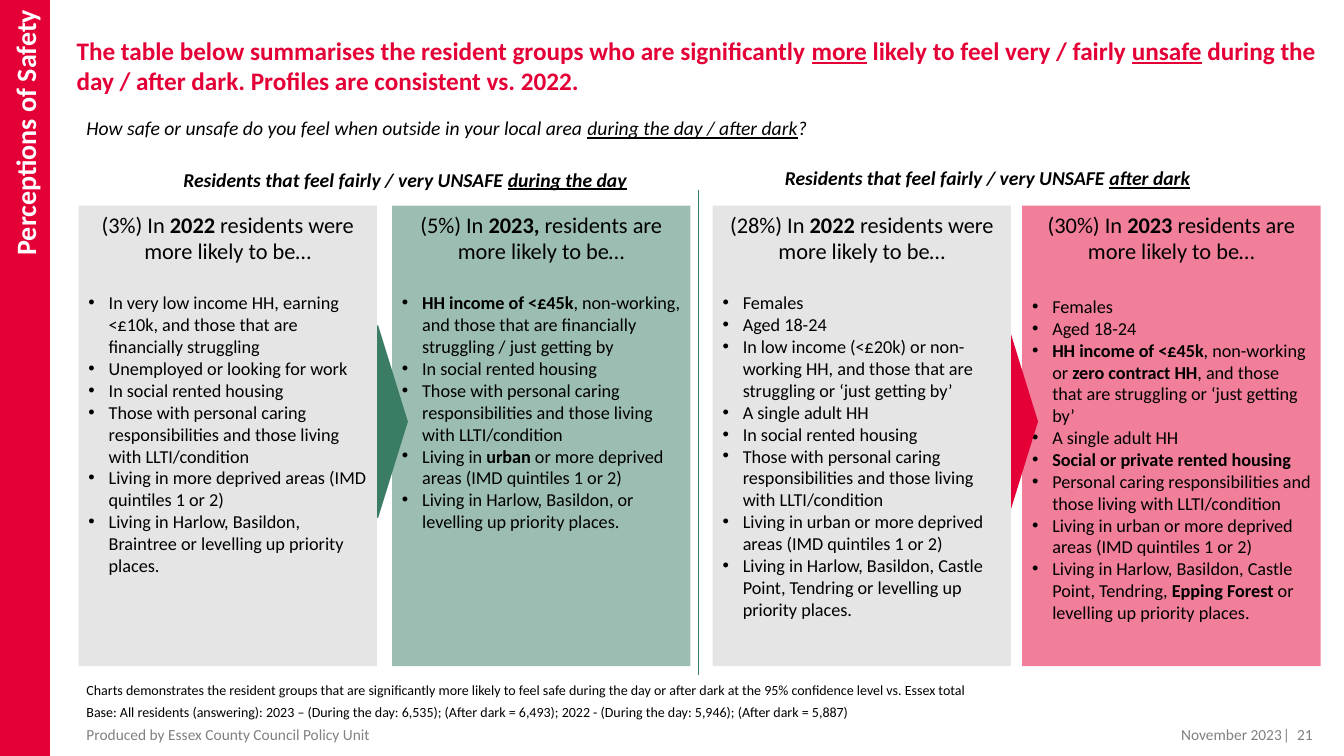
"""Build the slide on resident groups who feel unsafe."""
from lxml import etree
from pptx import Presentation
from pptx import util as u
from pptx.dml.color import RGBColor
from pptx.enum import shapes, text
from pptx.oxml.ns import qn

RED, GREEN, GREY, BLACK, WHITE, FOOTER = "E40037", "3A7D64", "E5E5E5", "000000", "FFFFFF", "808080"
LEFT, RIGHT, CENTER = text.PP_ALIGN.LEFT, text.PP_ALIGN.RIGHT, text.PP_ALIGN.CENTER
TOP, MIDDLE = text.MSO_ANCHOR.TOP, text.MSO_ANCHOR.MIDDLE
INSETS = (0.25, 0.13, 0.25, 0.13)
PANEL_TOP, PANEL_WIDTH, PANEL_HEIGHT = 5.18, 7.52, 11.61
ARROW_TOP, ARROW_WIDTH, ARROW_HEIGHT = 8.2, 1.5, 4.85
ARROW_OVERLAP = 0.97
INDENT = 0.51

TITLE = ("The table below summarises the resident groups who are significantly *more* likely to feel "
         "very / fairly *unsafe* during the day / after dark. Profiles are consistent vs. 2022.")
SECTION = "Perceptions of Safety"
CARERS = "Those with personal caring responsibilities and those living with LLTI/condition"
URBAN = "Living in urban or more deprived areas (IMD quintiles 1 or 2)"

PANELS_2023 = [
    (25.76, RED, 22, "(30%) In *2023* residents are more likely to be…", [
        "Females",
        "Aged 18-24",
        "*HH income of <£45k*, non-working or *zero contract HH*, and those that are "
        "struggling or ‘just getting by’",
        "A single adult HH",
        "*Social or private rented housing*",
        "Personal caring responsibilities and those living with LLTI/condition",
        URBAN,
        "Living in Harlow, Basildon, Castle Point, Tendring, *Epping Forest *or levelling up "
        "priority places."]),
    (9.88, GREEN, 19.5, "(5%) In *2023, *residents are more likely to be…", [
        "*HH income of <£45k*, non-working, and those that are financially struggling / just getting by",
        "In social rented housing",
        CARERS,
        "Living in *urban* or more deprived areas (IMD quintiles 1 or 2)",
        "Living in Harlow, Basildon, or levelling up priority places."]),
]
PANELS_2022 = [
    (1.98, GREY, 19.5, "(3%) In *2022* residents were more likely to be…", [
        "In very low income HH, earning <£10k, and those that are financially struggling",
        "Unemployed or looking for work",
        "In social rented housing",
        CARERS,
        "Living in more deprived areas (IMD quintiles 1 or 2)",
        "Living in Harlow, Basildon, Braintree or levelling up priority places."]),
    (17.96, GREY, 19.5, "(28%) In *2022* residents were more likely to be…", [
        "Females",
        "Aged 18-24",
        "In low income (<£20k) or non-working HH, and those that are struggling or ‘just getting by’",
        "A single adult HH",
        "In social rented housing",
        CARERS,
        URBAN,
        "Living in Harlow, Basildon, Castle Point, Tendring or levelling up priority places."]),
]

QUESTION = {"size": u.Pt(14), "italic": True}
SUBHEAD = {"size": u.Pt(14), "italic": True, "bold": True}
NOTE = {"size": u.Pt(10)}
SMALL = {"size": u.Pt(11)}
LABELS = [
    ((1.93, 2.79, 21.92, 0.86), "How safe or unsafe do you feel when outside in your local area "
     "*during the day / after dark*?", QUESTION, BLACK, LEFT, TOP, INSETS),
    ((4.37, 4.09, 11.91, 0.86), "Residents that feel fairly / very UNSAFE *during the day*",
     SUBHEAD, BLACK, LEFT, TOP, INSETS),
    ((19.53, 4.06, 11.4, 0.86), "Residents that feel fairly / very UNSAFE *after dark*",
     SUBHEAD, BLACK, LEFT, TOP, INSETS),
    ((1.93, 17.04, 25.98, 0.69), "Charts demonstrates the resident groups that are significantly more likely "
     "to feel safe during the day or after dark at the 95% confidence level vs. Essex total",
     NOTE, BLACK, LEFT, TOP, INSETS),
    ((1.93, 17.6, 26.67, 0.69), "Base: All residents (answering): 2023 – (During the day: 6,535); "
     "(After dark = 6,493); 2022 - (During the day: 5,946); (After dark = 5,887)",
     NOTE, BLACK, LEFT, TOP, INSETS),
    ((1.93, 18.31, 16.61, 0.38), "Produced by Essex County Council Policy Unit",
     SMALL, FOOTER, LEFT, MIDDLE, INSETS),
    ((26.21, 18.31, 6.1, 0.38), "November 2023", SMALL, FOOTER, RIGHT, MIDDLE, (0.25, 0.13, 0, 0.13)),
    ((32.08, 18.31, 1.3, 0.38), "|\t21", SMALL, FOOTER, LEFT, MIDDLE, (0.25, 0.13, 0, 0.13)),
]


def color(value):
    return RGBColor.from_string(value)


def lengths(box):
    return [u.Cm(value) for value in box]


def assign(target, values):
    for name, value in values.items():
        setattr(target, name, value)


def write(paragraph, words, font, ink, emphasis="underline"):
    for index, part in enumerate(words.split("*")):
        if part:
            run = paragraph.add_run()
            run.text = part
            assign(run.font, {"name": "Calibri", **font})
            run.font.color.rgb = color(ink)
            if index % 2:
                setattr(run.font, emphasis, True)


def set_frame(shape, anchor=TOP, insets=INSETS):
    frame = shape.text_frame
    left, top, right, bottom = lengths(insets)
    assign(frame, {"word_wrap": True, "auto_size": text.MSO_AUTO_SIZE.NONE, "vertical_anchor": anchor,
                   "margin_left": left, "margin_top": top, "margin_right": right, "margin_bottom": bottom})
    return frame


def add_block(slide, kind, box, fill, alpha=None):
    shape = slide.shapes.add_shape(kind, *lengths(box))
    shape.shadow.inherit = False
    shape.fill.solid()
    shape.fill.fore_color.rgb = color(fill)
    shape.line.fill.background()
    if alpha:
        tint = shape.fill._xPr.find(".//" + qn("a:srgbClr"))
        etree.SubElement(tint, qn("a:alpha"), val=str(alpha * 1000))
    return shape


def add_panel(slide, left, fill, gap, heading, groups, alpha=None):
    box = (left, PANEL_TOP, PANEL_WIDTH, PANEL_HEIGHT)
    frame = set_frame(add_block(slide, shapes.MSO_SHAPE.RECTANGLE, box, fill, alpha))
    frame.paragraphs[0].alignment = CENTER
    write(frame.paragraphs[0], heading, {"size": u.Pt(16)}, BLACK, "bold")
    for index, group in enumerate(groups):
        paragraph = frame.add_paragraph()
        properties = paragraph._p.get_or_add_pPr()
        properties.set("marL", str(u.Cm(INDENT)))
        properties.set("indent", str(-u.Cm(INDENT)))
        etree.SubElement(properties, qn("a:buFont"), typeface="Arial")
        etree.SubElement(properties, qn("a:buChar"), char="•")
        paragraph.alignment = LEFT
        if index == 0:
            paragraph.space_before = u.Pt(gap)
        write(paragraph, group, {"size": u.Pt(13)}, BLACK, "bold")


def add_label(slide, box, words, font, ink, alignment, anchor, insets):
    frame = set_frame(slide.shapes.add_textbox(*lengths(box)), anchor, insets)
    paragraph = frame.paragraphs[0]
    if "\t" in words:
        stops = etree.SubElement(paragraph._p.get_or_add_pPr(), qn("a:tabLst"))
        etree.SubElement(stops, qn("a:tab"), pos=str(u.Cm(0.36)), algn="l")
    paragraph.alignment = alignment
    write(paragraph, words, font, ink)


def main():
    presentation = Presentation()
    presentation.slide_width, presentation.slide_height = lengths((33.87, 19.05))
    slide = presentation.slides.add_slide(presentation.slide_layouts[5])

    title = slide.shapes.title
    title.left, title.top, title.width, title.height = lengths((1.93, 0.89, 31.34, 2.74))
    heading = set_frame(title, TOP, (0, 0, 0, 0)).paragraphs[0]
    heading.alignment = LEFT
    write(heading, TITLE, {"size": u.Pt(18), "bold": True}, RED)

    for panel in PANELS_2023:
        add_panel(slide, *panel, alpha=50)
        arrow = (panel[0] - ARROW_OVERLAP - 0.13, ARROW_TOP, ARROW_WIDTH, ARROW_HEIGHT)
        add_block(slide, shapes.MSO_SHAPE.PENTAGON, arrow, panel[1])
    for panel in PANELS_2022:
        add_panel(slide, *panel)

    sidebar = add_block(slide, shapes.MSO_SHAPE.RECTANGLE, (0, 0, 1.26, 19.05), RED)
    frame = set_frame(sidebar, MIDDLE, (0.25, 0.25, 0.25, 0.13))
    frame._txBody.bodyPr.set("vert", "vert270")
    frame.paragraphs[0].alignment = RIGHT
    write(frame.paragraphs[0], SECTION, {"size": u.Pt(20), "bold": True}, WHITE)

    for label in LABELS:
        add_label(slide, *label)

    divider = slide.shapes.add_connector(shapes.MSO_CONNECTOR.STRAIGHT, *lengths((17.6, 4.8, 17.6, 17.02)))
    divider.line.color.rgb = color(GREEN)
    divider.line.width = u.Pt(0.5)
    etree.SubElement(divider._element.spPr, qn("a:effectLst"))
    presentation.save("out.pptx")


if __name__ == "__main__":
    main()
